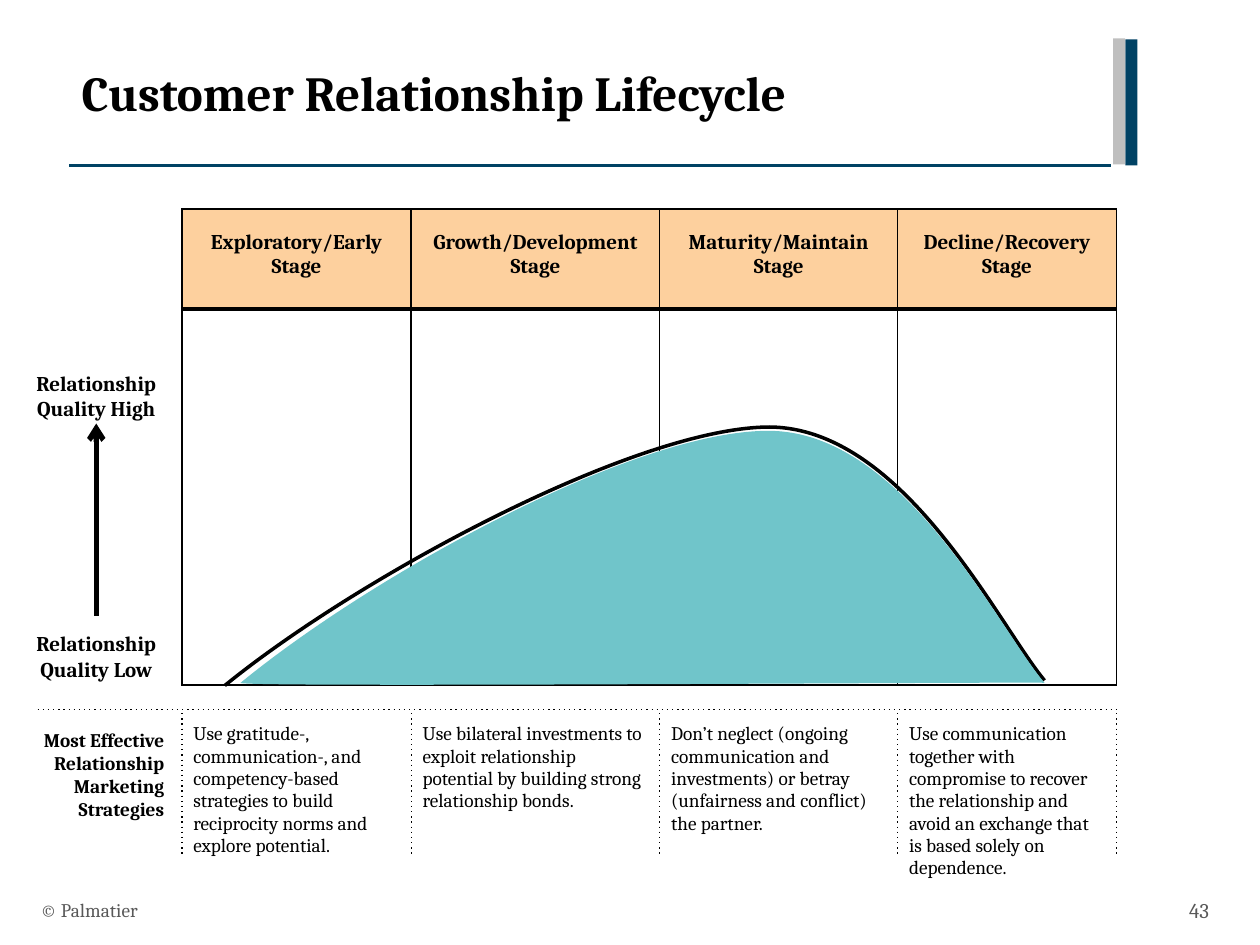
from dataclasses import dataclass
from itertools import accumulate

import lxml.etree
import pptx
import pptx.dml.color
import pptx.enum.shapes
import pptx.enum.text
import pptx.oxml.ns
import pptx.slide
import pptx.util

Pt = pptx.util.Pt
qn = pptx.oxml.ns.qn
ALIGN = pptx.enum.text.PP_ALIGN
ANCHOR = pptx.enum.text.MSO_ANCHOR
INK, NAVY, GRAY, FOOTER = "000000", "004264", "BFBFBF", "595959"
PEACH, TEAL, WHITE = "FDD09E", "70C5CA", "FFFFFF"
NO_STYLE = "{2D5ABB26-0587-4C30-8999-92F81FD0307C}"
TABLE_LEFT, TABLE_TOP = 104, 119.5
ROW_HEIGHTS = (57, 215, 19, 146)


@dataclass(frozen=True)
class Stage:
    name: str
    strategy: str
    width: float


@dataclass(frozen=True)
class Label:
    text: str
    box: tuple[float, float, float, float]
    size: float = 12
    color: str = INK
    bold: bool = True
    align: ALIGN = ALIGN.CENTER
    anchor: ANCHOR = ANCHOR.TOP


@dataclass(frozen=True)
class Line:
    start: tuple[float, float]
    end: tuple[float, float]
    width: float = 0.75
    color: str = INK
    dash: str = "solid"
    arrow: bool = False


STAGES = (
    Stage("Exploratory/Early Stage",
          "Use gratitude-, communication-, and competency-based strategies to build "
          "reciprocity norms and explore potential.", 131),
    Stage("Growth/Development Stage",
          "Use bilateral investments to exploit relationship potential by building "
          "strong relationship bonds.", 142),
    Stage("Maturity/Maintain Stage",
          "Don’t neglect (ongoing communication and investments) or betray "
          "(unfairness and conflict) the partner.", 136),
    Stage("Decline/Recovery Stage",
          "Use communication together with compromise to recover the relationship and "
          "avoid an exchange that is based solely on dependence.", 125),
)
STAGE_EDGES = tuple(accumulate((s.width for s in STAGES), initial=TABLE_LEFT))

HIGH_QUALITY = Label("Relationship Quality High", (6, 208, 98, 34))
LABELS = (
    Label("Relationship Quality Low", (6, 357, 98, 35)),
    Label("Most Effective Relationship Marketing Strategies", (0, 412.5, 101, 60),
          size=11, align=ALIGN.RIGHT),
    Label("© Palmatier", (16, 505.5, 482, 29), size=11, color=FOOTER, bold=False,
          align=ALIGN.LEFT, anchor=ANCHOR.MIDDLE),
    Label("43", (654, 505.5, 44, 29), color=FOOTER, bold=False,
          align=ALIGN.RIGHT, anchor=ANCHOR.MIDDLE),
)
LIFECYCLE_CURVE = ((128.5, 391.7), (204.5, 329.8), (363.6, 244), (440, 244),
                   (517, 244.8), (571, 357.8), (596.9, 388.8))
LIFECYCLE_AREA = ((137.5, 390.2), (213.8, 327.6), (363.6, 245.5), (440, 246.2),
                  (517, 247), (571, 360), (596.9, 390.2),
                  (592.6, 389.5), (136, 393), (137.5, 390.2))


def rgb(color: str) -> pptx.dml.color.RGBColor:
    return pptx.dml.color.RGBColor.from_string(color)


def write_text(frame, text: str, *, size: float, color: str = INK, bold: bool = False,
               align: ALIGN = ALIGN.LEFT) -> None:
    paragraph = frame.paragraphs[0]
    paragraph.alignment = align
    run = paragraph.add_run()
    run.text = text
    run.font.name = "Cambria"
    run.font.size = Pt(size)
    run.font.bold = bold
    run.font.color.rgb = rgb(color)


def add_label(slide: pptx.slide.Slide, label: Label):
    box = slide.shapes.add_textbox(*map(Pt, label.box))
    frame = box.text_frame
    frame.word_wrap = True
    frame.vertical_anchor = label.anchor
    write_text(frame, label.text, size=label.size, color=label.color,
               bold=label.bold, align=label.align)
    return box


def add_line(slide: pptx.slide.Slide, line: Line):
    connector = slide.shapes.add_connector(
        pptx.enum.shapes.MSO_CONNECTOR.STRAIGHT, *map(Pt, line.start + line.end))
    connector.line.width = Pt(line.width)
    connector.line.color.rgb = rgb(line.color)
    properties = connector._element.spPr
    outline = properties.find(qn("a:ln"))
    lxml.etree.SubElement(outline, qn("a:prstDash"), val=line.dash)
    if line.arrow:
        lxml.etree.SubElement(outline, qn("a:tailEnd"), type="arrow")
    lxml.etree.SubElement(properties, qn("a:effectLst"))
    return connector


def add_bar(slide: pptx.slide.Slide, left: float, top: float, color: str) -> None:
    bar = slide.shapes.add_shape(pptx.enum.shapes.MSO_SHAPE.RECTANGLE,
                                 *map(Pt, (left, top, 7, 72)))
    bar.shadow.inherit = False
    bar.fill.solid()
    bar.fill.fore_color.rgb = rgb(color)
    bar.line.fill.background()


def add_bezier(slide: pptx.slide.Slide, points: tuple, closed: bool = False):
    start, *controls = [(Pt(x), Pt(y)) for x, y in points]
    builder = slide.shapes.build_freeform(*start)
    builder.add_line_segments(controls, close=closed)
    shape = builder.convert_to_shape()
    shape.shadow.inherit = False
    segments = list(shape._element.iter(qn("a:lnTo")))
    for first in range(0, len(segments), 3):
        cubic = lxml.etree.Element(qn("a:cubicBezTo"))
        segments[first].addprevious(cubic)
        for segment in segments[first:first + 3]:
            cubic.append(segment[0])
            segment.getparent().remove(segment)
    return shape


def format_cell(cell, fill: str | None, borders: dict[str, float]) -> None:
    cell.margin_left = cell.margin_right = Pt(6.5)
    cell.margin_top = cell.margin_bottom = Pt(3)
    if fill:
        cell.fill.solid()
        cell.fill.fore_color.rgb = rgb(fill)
    else:
        cell.fill.background()
    properties = cell._tc.get_or_add_tcPr()
    for position, side in enumerate("LRTB"):
        width = borders.get(side, 0)
        border = lxml.etree.Element(qn(f"a:ln{side}"), w=str(Pt(width)))
        properties.insert(position, border)
        if width:
            solid = lxml.etree.SubElement(border, qn("a:solidFill"))
            lxml.etree.SubElement(solid, qn("a:srgbClr"), val=INK)
        else:
            lxml.etree.SubElement(border, qn("a:noFill"))


def add_stage_table(slide: pptx.slide.Slide) -> None:
    table = slide.shapes.add_table(
        len(ROW_HEIGHTS), len(STAGES), Pt(TABLE_LEFT), Pt(TABLE_TOP),
        Pt(STAGE_EDGES[-1] - TABLE_LEFT), Pt(sum(ROW_HEIGHTS))).table
    table.first_row = table.horz_banding = False
    table._tbl.tblPr.find(qn("a:tableStyleId")).text = NO_STYLE
    for row, height in zip(table.rows, ROW_HEIGHTS):
        row.height = Pt(height)
    formats = ((PEACH, {"L": 1, "R": 1, "T": 1, "B": 3}),
               (WHITE, {"L": 1, "R": 1, "T": 3, "B": 1}),
               (None, {"T": 1}),
               (None, {}))
    for index, stage in enumerate(STAGES):
        table.columns[index].width = Pt(stage.width)
        header, chart_area, gap, strategy = cells = [
            table.cell(row, index) for row in range(len(ROW_HEIGHTS))]
        for cell, (fill, borders) in zip(cells, formats):
            format_cell(cell, fill, borders)
        header.vertical_anchor = ANCHOR.BOTTOM
        header.margin_bottom = Pt(17)
        write_text(header.text_frame, stage.name, size=12, bold=True, align=ALIGN.CENTER)
        write_text(strategy.text_frame, stage.strategy, size=11)
        for cell in (chart_area, gap):
            lxml.etree.SubElement(cell.text_frame.paragraphs[0]._p,
                                  qn("a:endParaRPr"), sz="800")


def main() -> None:
    deck = pptx.Presentation()
    deck.slide_width, deck.slide_height = Pt(720), Pt(540)
    slide = deck.slides.add_slide(deck.slide_layouts[5])

    title = slide.shapes.title
    title.left, title.top, title.width, title.height = map(Pt, (39.5, 32, 595, 63))
    title.text_frame.vertical_anchor = ANCHOR.TOP
    title.text_frame.auto_size = pptx.enum.text.MSO_AUTO_SIZE.NONE
    write_text(title.text_frame, "Customer Relationship Lifecycle", size=28, bold=True)

    add_line(slide, Line((39.5, 94.5), (635, 94.5), 2, NAVY))
    add_bar(slide, 643, 22.5, NAVY)
    add_bar(slide, 636, 22, GRAY)
    add_stage_table(slide)

    curve = add_bezier(slide, LIFECYCLE_CURVE)
    curve.fill.background()
    curve.line.width = Pt(2)
    curve.line.color.rgb = rgb(INK)

    quality_arrow = add_line(slide, Line((55, 352), (55, 242), 3, arrow=True))
    quality_arrow.end_connect(add_label(slide, HIGH_QUALITY), 0 + 2)
    for label in LABELS:
        add_label(slide, label)

    add_line(slide, Line((21.5, 405.5), (STAGE_EDGES[-1], 405.5), dash="dot"))
    for edge in STAGE_EDGES:
        add_line(slide, Line((edge, 407.5), (edge, 490), dash="dot"))

    area = add_bezier(slide, LIFECYCLE_AREA, closed=True)
    area.fill.solid()
    area.fill.fore_color.rgb = rgb(TEAL)
    area.line.fill.background()

    deck.save("out.pptx")


if __name__ == "__main__":
    main()
